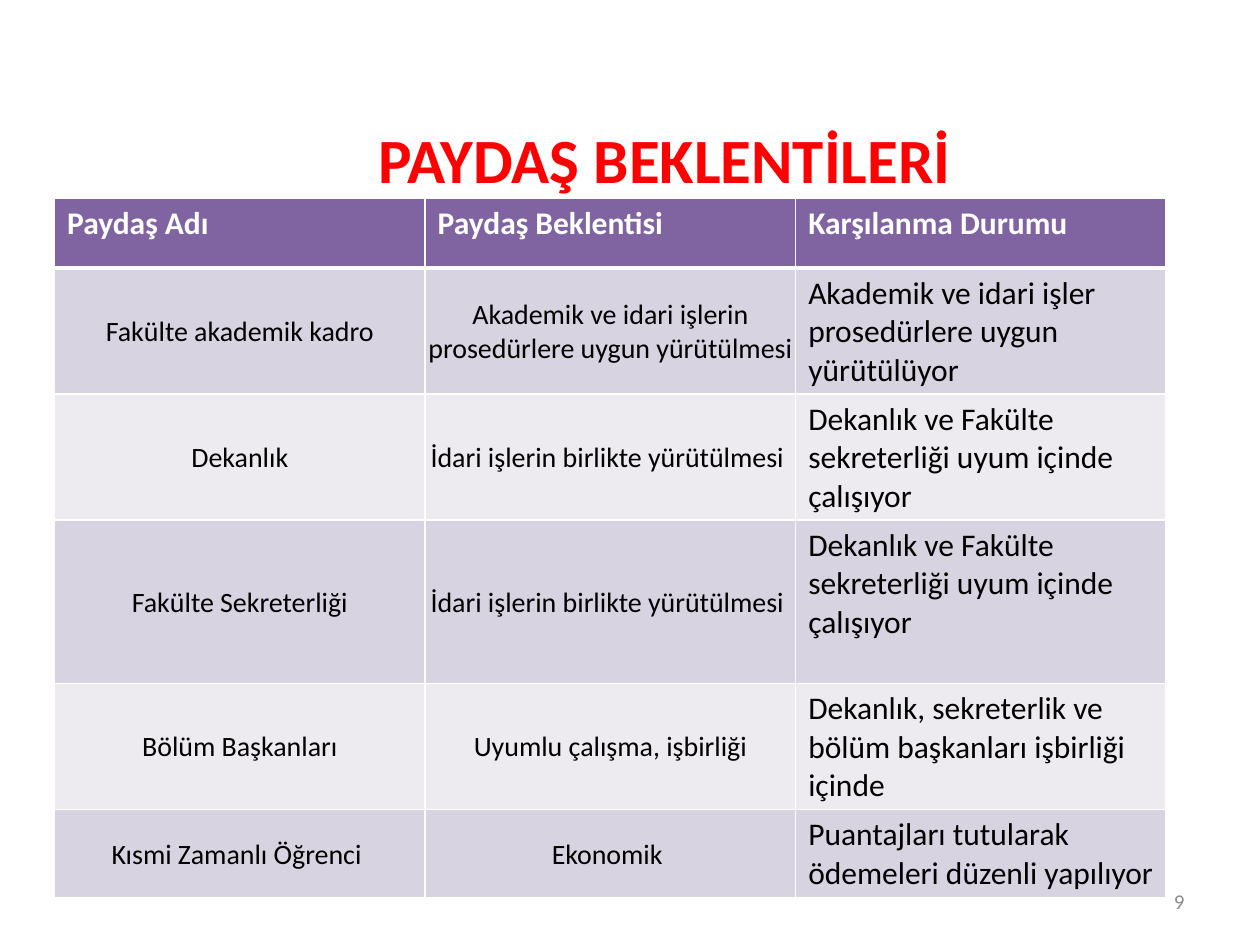
import pptx
import pptx.util
import pptx.dml.color
import pptx.enum.text
import pptx.oxml
import pptx.oxml.ns
from pptx.util import Cm

# Content
TITLE = "PAYDAŞ BEKLENTİLERİ"
PAGE_NUMBER = "9"
HEADINGS = ("Paydaş Adı", "Paydaş Beklentisi", "Karşılanma Durumu")
STAKEHOLDERS = [
    ("Fakülte akademik kadro",
     "Akademik ve idari işlerin prosedürlere uygun yürütülmesi ",
     "Akademik ve idari işler prosedürlere uygun yürütülüyor"),
    ("Dekanlık",
     "İdari işlerin birlikte yürütülmesi ",
     "Dekanlık ve Fakülte sekreterliği uyum içinde çalışıyor"),
    ("Fakülte Sekreterliği",
     "İdari işlerin birlikte yürütülmesi ",
     "Dekanlık ve Fakülte sekreterliği uyum içinde çalışıyor"),
    ("Bölüm Başkanları",
     "Uyumlu çalışma, işbirliği",
     "Dekanlık, sekreterlik ve bölüm başkanları işbirliği içinde"),
    ("Kısmi Zamanlı Öğrenci ",
     "Ekonomik ",
     "Puantajları tutularak ödemeleri düzenli yapılıyor"),
]

THEME = {
    "font": "Calibri",
    "title": "FF0000", "page": "8C8C8C", "heading": "FFFFFF", "body": "000000",
    "heading_fill": "8064A2", "bands": ("D8D3E0", "EDEAF0"), "border": "FFFFFF",
    "title_size": 36, "large_size": 18, "small_size": 16, "page_size": 12,
}

# Layout
TITLE_BOX = (Cm(3.7), Cm(2.31), Cm(19.4), Cm(1.8))
PAGE_BOX = (Cm(18.2), Cm(17.65), Cm(5.93), Cm(1.02))
TABLE_LEFT, TABLE_TOP, COLUMN_WIDTH = Cm(1.1), Cm(4), Cm(7.47)
ROW_HEIGHTS = [Cm(height) for height in (1.4, 2.54, 2.54, 3.3, 2.54, 1.77)]

ALIGN = pptx.enum.text.PP_ALIGN
ANCHOR = pptx.enum.text.MSO_ANCHOR
TIGHT_CELL = {"vertical_anchor": ANCHOR.MIDDLE, "margin_left": Cm(0.03),
              "margin_right": Cm(0.03), "margin_top": Cm(0.03), "margin_bottom": 0}


def color(name):
    return pptx.dml.color.RGBColor.from_string(name)


def apply(target, values):
    for name, value in values.items():
        setattr(target, name, value)


def write(text_frame, text, size, text_color, bold=False, align=ALIGN.LEFT):
    paragraph = text_frame.paragraphs[0]
    paragraph.alignment = align
    run = paragraph.add_run()
    run.text = text
    apply(run.font, {"name": THEME["font"], "size": pptx.util.Pt(size), "bold": bold})
    run.font.color.rgb = color(text_color)


def add_borders(cell, widths):
    properties = cell._tc.get_or_add_tcPr()
    for side, points in widths.items():
        properties.append(pptx.oxml.parse_xml(
            f'<a:ln{side} {pptx.oxml.ns.nsdecls("a")} w="{pptx.util.Pt(points)}">'
            f'<a:solidFill><a:srgbClr val="{THEME["border"]}"/></a:solidFill></a:ln{side}>'))


def fill_cell(cell, row, column, text):
    is_heading = row == 0
    is_tight = not is_heading and column < 2
    add_borders(cell, {"L": 1, "R": 1, "T": 3 if row == 1 else 1, "B": 3 if is_heading else 1})
    cell.fill.solid()
    cell.fill.fore_color.rgb = color(
        THEME["heading_fill"] if is_heading else THEME["bands"][(row - 1) % 2])
    if is_tight:
        apply(cell, TIGHT_CELL)
    write(cell.text_frame, text,
          THEME["small_size" if is_tight else "large_size"],
          THEME["heading" if is_heading else "body"],
          is_heading, ALIGN.CENTER if is_tight else ALIGN.LEFT)


def add_title(slide):
    title = slide.shapes.title
    apply(title, dict(zip(("left", "top", "width", "height"), TITLE_BOX)))
    apply(title.text_frame, {"vertical_anchor": ANCHOR.TOP, "word_wrap": True,
                             "auto_size": pptx.enum.text.MSO_AUTO_SIZE.NONE})
    write(title.text_frame, TITLE, THEME["title_size"], THEME["title"], True, ALIGN.CENTER)


def add_page_number(slide):
    box = slide.shapes.add_textbox(*PAGE_BOX)
    apply(box.text_frame, {"vertical_anchor": ANCHOR.MIDDLE, "word_wrap": True})
    write(box.text_frame, PAGE_NUMBER, THEME["page_size"], THEME["page"], align=ALIGN.RIGHT)


def add_stakeholder_table(slide):
    rows = [HEADINGS, *STAKEHOLDERS]
    table = slide.shapes.add_table(
        len(rows), len(HEADINGS), TABLE_LEFT, TABLE_TOP,
        COLUMN_WIDTH * len(HEADINGS), sum(ROW_HEIGHTS)).table
    for column in table.columns:
        column.width = COLUMN_WIDTH
    for row_index, (height, texts) in enumerate(zip(ROW_HEIGHTS, rows)):
        table.rows[row_index].height = height
        for column_index, text in enumerate(texts):
            fill_cell(table.cell(row_index, column_index), row_index, column_index, text)


def main():
    presentation = pptx.Presentation()
    apply(presentation, {"slide_width": Cm(25.4), "slide_height": Cm(19.05)})
    slide = presentation.slides.add_slide(presentation.slide_layouts[5])
    add_title(slide)
    add_page_number(slide)
    add_stakeholder_table(slide)
    presentation.save("out.pptx")


if __name__ == "__main__":
    main()
